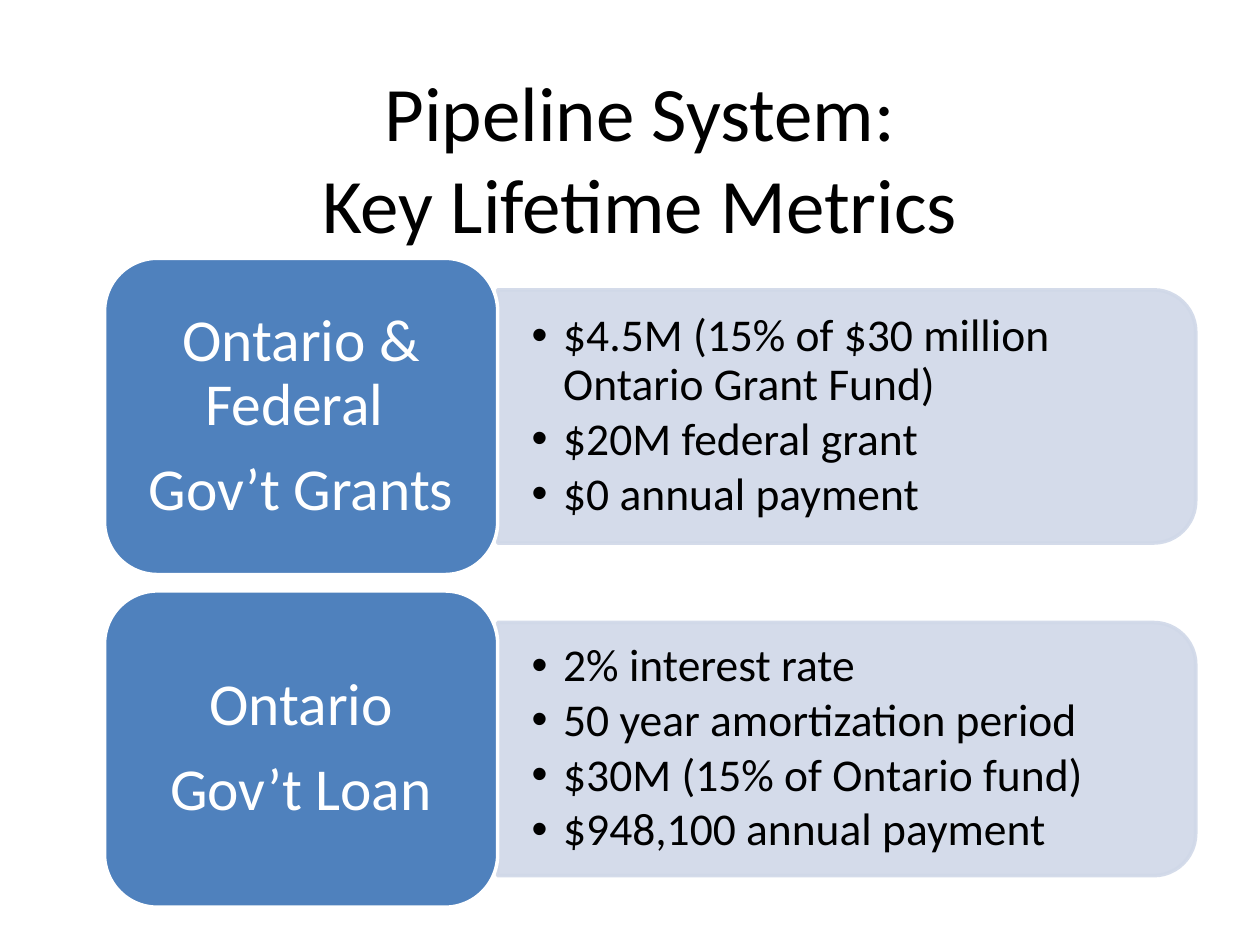
"""Build the slide of lifetime metrics for the pipeline system."""
from lxml.etree import SubElement
from pptx import Presentation
from pptx.dml.color import RGBColor
from pptx.enum.shapes import MSO_SHAPE as SHAPE
from pptx.enum.text import MSO_ANCHOR as ANCHOR, MSO_AUTO_SIZE as AUTO, PP_ALIGN as ALIGN
from pptx.oxml.ns import qn
from pptx.util import Inches, Pt

COLORS = {"label": "4F81BD", "panel": "D0D8E8", "white": "FFFFFF", "black": "000000"}
GROUPS = [
    (["Ontario & Federal ", "Gov’t Grants"],
     ["$4.5M (15% of $30 million Ontario Grant Fund)", "$20M federal grant",
      "$0 annual payment"]),
    (["Ontario", "Gov’t Loan"],
     ["2% interest rate", "50 year amortization period",
      "$30M (15% of Ontario fund)", "$948,100 annual payment"]),
]
LEFT, TOP, PITCH = 0.83, 2.05, 2.64
LABEL_W, LABEL_H = 3.12, 2.51
PANEL_W, PANEL_H = 5.54, 2.01


class Deck:
    font = "Calibri"

    def __init__(self):
        self.prs = Presentation()
        self.prs.slide_width, self.prs.slide_height = Inches(10), Inches(7.5)
        self.s = self.prs.slides.add_slide(self.prs.slide_layouts[3])

    def place(self, sp, x, y, w, h):
        sp.left, sp.top, sp.width, sp.height = (Inches(v) for v in (x, y, w, h))

    def frame(self, sp, dx, dy):
        tf = sp.text_frame
        tf.word_wrap, tf.auto_size = True, AUTO.NONE
        tf.vertical_anchor = ANCHOR.MIDDLE
        tf.margin_left = tf.margin_right = Inches(dx)
        tf.margin_top = tf.margin_bottom = Inches(dy)
        return tf

    def run(self, p, text, size, color):
        r = p.add_run()
        r.text = text
        r.font.name, r.font.size = self.font, Pt(size)
        r.font.color.rgb = RGBColor.from_string(COLORS[color])

    def paragraphs(self, tf, texts, size, color, after, align):
        for i, text in enumerate(texts):
            p = tf.add_paragraph() if i else tf.paragraphs[0]
            p.alignment, p.line_spacing = align, 0.9
            p.space_before, p.space_after = Pt(0), Pt(after)
            self.run(p, text, size, color)

    def title(self, lines, x, y, w, h):
        sp = self.s.shapes.title
        self.place(sp, x, y, w, h)
        p = self.frame(sp, 0.1, 0.05).paragraphs[0]
        p.alignment = ALIGN.CENTER
        for i, line in enumerate(lines):
            if i:
                p.add_line_break()
            self.run(p, line, 44, "black")

    def box(self, kind, x, y, w, h, fill, line):
        sp = self.s.shapes.add_shape(kind, *(Inches(v) for v in (x, y, w, h)))
        sp.shadow.inherit = False
        sp.fill.solid()
        sp.fill.fore_color.rgb = RGBColor.from_string(COLORS[fill])
        sp.line.color.rgb = RGBColor.from_string(COLORS[line])
        sp.line.width = Pt(2)
        return sp

    def panel(self, x, y, w, h):
        sp = self.box(SHAPE.ROUND_2_SAME_RECTANGLE, x + (w - h) / 2, y - (w - h) / 2,
                      h, w, "panel", "panel")
        sp.rotation = 90
        for color in sp.element.spPr.iter(qn("a:srgbClr")):
            SubElement(color, qn("a:alpha"), val="90000")

    def label(self, texts, x, y, w, h):
        sp = self.box(SHAPE.ROUNDED_RECTANGLE, x, y, w, h, "label", "white")
        tf = self.frame(sp, 0.14, 0.07)
        self.paragraphs(tf, texts, 34, "white", 11.9, ALIGN.CENTER)

    def bullets(self, idx, texts, x, y, w, h):
        sp = self.s.placeholders[idx]
        self.place(sp, x, y, w, h)
        self.s.shapes.element.append(sp.element)
        tf = self.frame(sp, 0.27, 0.14)
        self.paragraphs(tf, texts, 26, "black", 3.2, ALIGN.LEFT)
        for p in tf.paragraphs:
            pPr = p._p.get_or_add_pPr()
            pPr.set("marL", str(Inches(0.25)))
            pPr.set("indent", str(Inches(-0.25)))


def main():
    deck = Deck()
    deck.title(["Pipeline System:", "Key Lifetime Metrics"], LEFT, 0.44, 8.5, 1.61)
    panel_x = LEFT + LABEL_W
    for i, (names, facts) in enumerate(GROUPS):
        y = TOP + i * PITCH
        deck.panel(panel_x, y + (LABEL_H - PANEL_H) / 2, PANEL_W, PANEL_H)
        deck.label(names, LEFT, y, LABEL_W, LABEL_H)
        deck.bullets(i + 1, facts, panel_x, y + 0.35, 5.45, 1.81)
    deck.prs.save("out.pptx")


if __name__ == "__main__":
    main()
